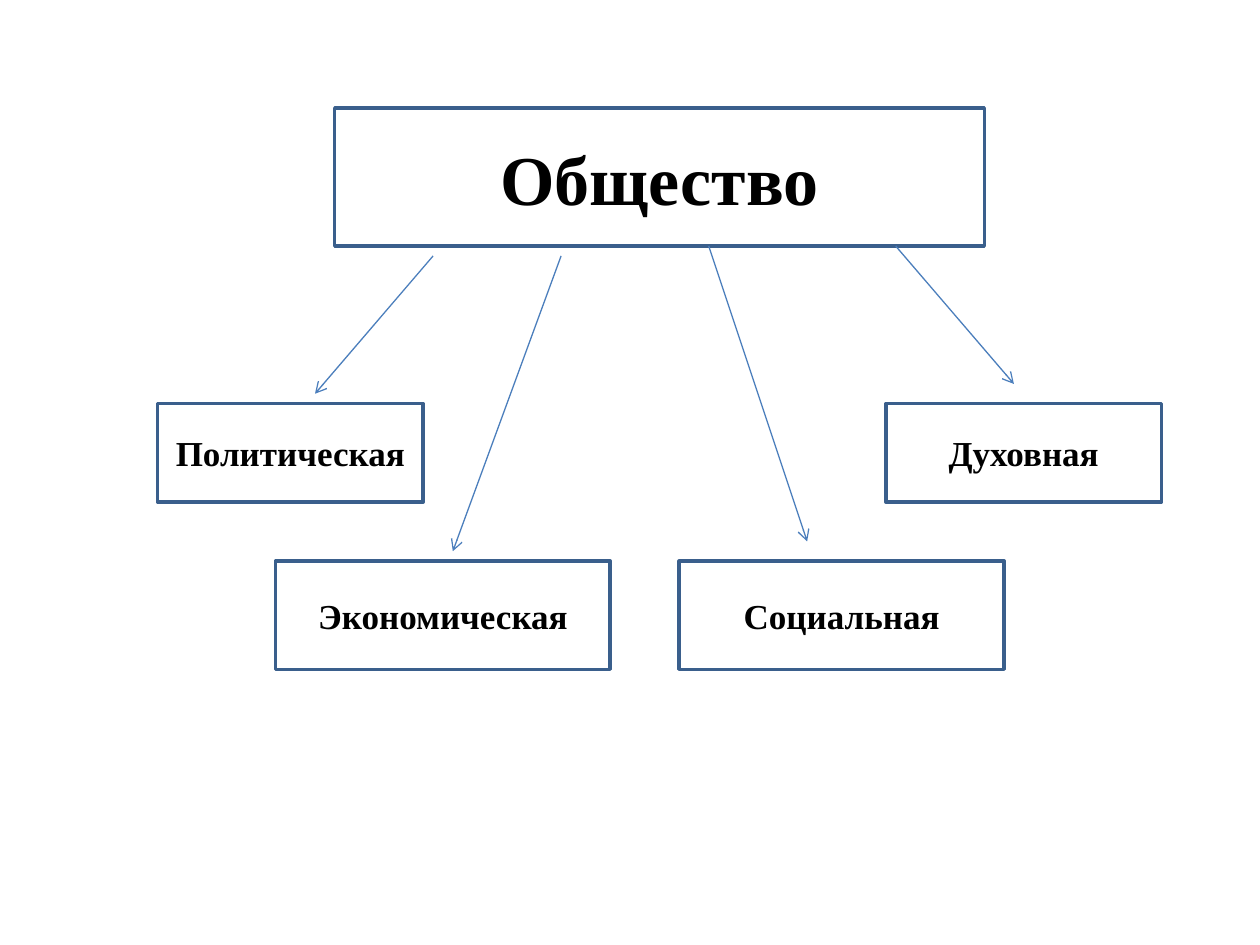
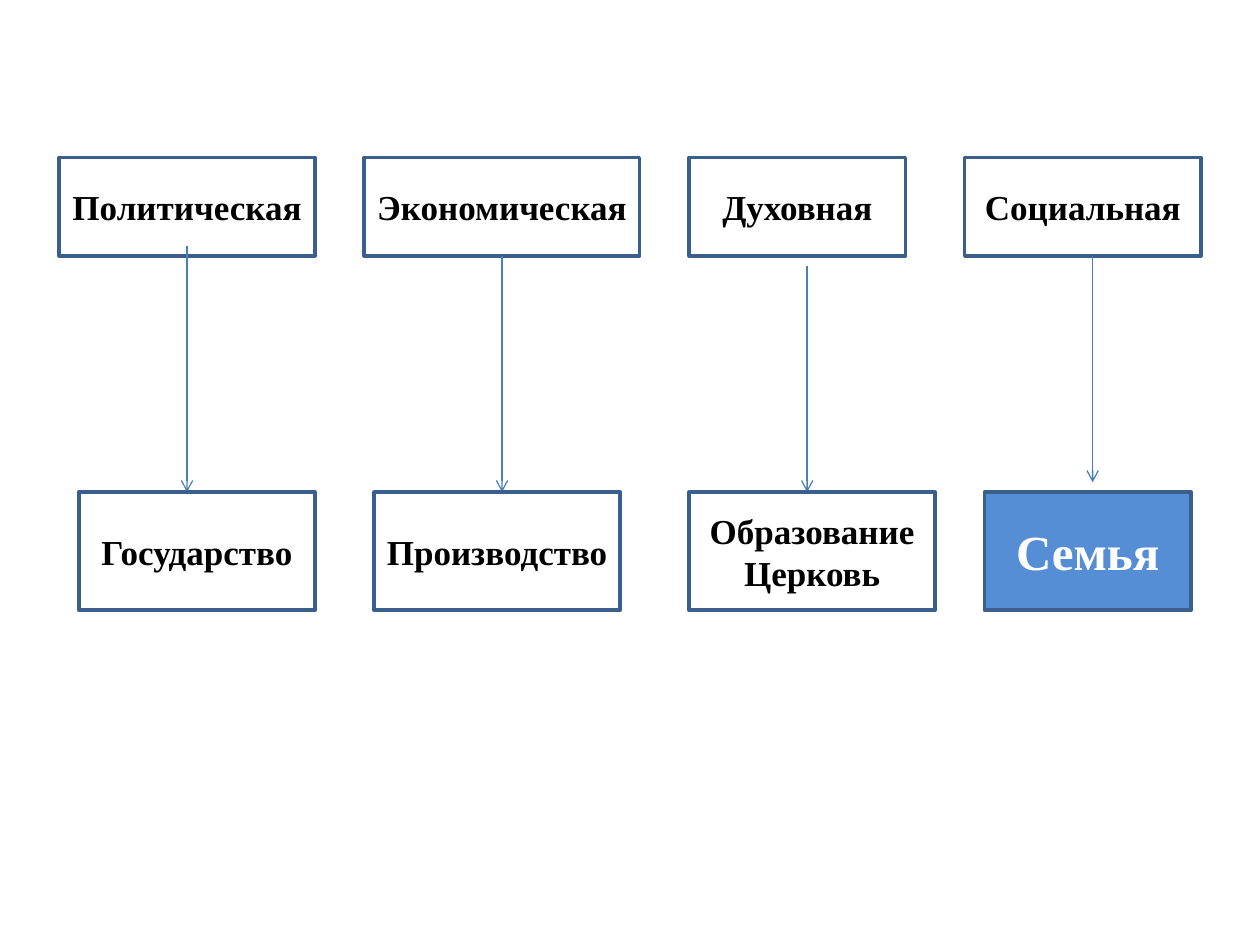
"""Build two diagrams: the spheres of society and their institutions."""
from dataclasses import dataclass

from lxml import etree
from pptx import Presentation
from pptx.dml.color import RGBColor
from pptx.enum import shapes, text
from pptx.oxml import ns
from pptx.slide import Slide
from pptx.util import Pt

WHITE = RGBColor(0xFF, 0xFF, 0xFF)
BLACK = RGBColor(0x00, 0x00, 0x00)
BORDER = RGBColor(0x3A, 0x5F, 0x8C)
ARROW = RGBColor(0x4B, 0x7E, 0xBC)
ACCENT = RGBColor(0x55, 0x8E, 0xD5)
FONT = "Times New Roman"


@dataclass(frozen=True)
class Box:
    label: str
    left: float
    top: float
    width: float
    height: float
    size: float = 20
    fill: RGBColor = WHITE
    color: RGBColor = BLACK


@dataclass(frozen=True)
class Arrow:
    start_x: float
    start_y: float
    end_x: float
    end_y: float


SOCIETY = Box("Общество", 191.25, 61.88, 371.25, 78.75, size=40)
SPHERES = [
    Box("Политическая", 90, 230.63, 151.88, 56.25),
    Box("Экономическая", 157.5, 320.63, 191.25, 61.88),
    Box("Социальная", 388.13, 320.63, 185.63, 61.88),
    Box("Духовная", 506.25, 230.63, 157.5, 56.25),
]
SPHERE_ARROWS = [
    Arrow(247.5, 146.25, 180, 225),
    Arrow(320.63, 146.25, 258.75, 315),
    Arrow(405, 140.63, 461.25, 309.38),
    Arrow(511.88, 140.63, 579.38, 219.38),
]

SPHERE_ROW = [
    Box(label, left, 90, width, 56.25)
    for label, left, width in [
        ("Политическая", 33.75, 146.25),
        ("Экономическая", 208.13, 157.5),
        ("Духовная", 393.75, 123.75),
        ("Социальная", 551.25, 135),
    ]
]
INSTITUTION_TOP, INSTITUTION_HEIGHT = 281.25, 67.5
INSTITUTIONS = [
    Box(label, left, INSTITUTION_TOP, width, INSTITUTION_HEIGHT)
    for label, left, width in [
        ("Государство", 45, 135),
        ("Производство", 213.75, 140.63),
        ("Образование\nЦерковь", 393.75, 140.63),
    ]
]
FAMILY = Box("Семья", 562.5, INSTITUTION_TOP, 118.13, INSTITUTION_HEIGHT,
             size=28, fill=ACCENT, color=WHITE)
INSTITUTION_ARROWS = [
    Arrow(x, start, x, end)
    for x, start, end in [
        (106.88, 140.63, INSTITUTION_TOP),
        (286.88, 146.25, INSTITUTION_TOP),
        (461.25, 151.88, INSTITUTION_TOP),
        (624.38, 146.25, 275.63),
    ]
]

DIAGRAMS = [
    [SOCIETY, *SPHERE_ARROWS, *SPHERES],
    [*SPHERE_ROW, *INSTITUTION_ARROWS, *INSTITUTIONS, FAMILY],
]


def draw_box(page: Slide, box: Box) -> None:
    """Draw a bordered rectangle with a centred bold label."""
    shape = page.shapes.add_shape(
        shapes.MSO_SHAPE.RECTANGLE,
        Pt(box.left), Pt(box.top), Pt(box.width), Pt(box.height))
    shape.shadow.inherit = False
    shape.fill.solid()
    shape.fill.fore_color.rgb = box.fill
    shape.line.color.rgb = BORDER
    shape.line.width = Pt(2)
    frame = shape.text_frame
    frame.word_wrap = True
    frame.margin_left = frame.margin_right = Pt(3.6)
    frame.vertical_anchor = text.MSO_ANCHOR.MIDDLE
    frame.text = box.label
    for para in frame.paragraphs:
        para.alignment = text.PP_ALIGN.CENTER
        para.font.name = FONT
        para.font.size = Pt(box.size)
        para.font.bold = True
        para.font.color.rgb = box.color


def draw_arrow(page: Slide, arrow: Arrow) -> None:
    """Draw a thin straight line with an open arrowhead at its end."""
    connector = page.shapes.add_connector(
        shapes.MSO_CONNECTOR.STRAIGHT,
        Pt(arrow.start_x), Pt(arrow.start_y), Pt(arrow.end_x), Pt(arrow.end_y))
    connector.line.color.rgb = ARROW
    connector.line.width = Pt(0.75)
    etree.SubElement(connector.line._get_or_add_ln(), ns.qn("a:tailEnd"), type="arrow")
    etree.SubElement(connector._element.spPr, ns.qn("a:effectLst"))


def main() -> None:
    """Create the deck and save it."""
    deck = Presentation()
    deck.slide_width, deck.slide_height = Pt(720), Pt(540)
    for diagram in DIAGRAMS:
        page = deck.slides.add_slide(deck.slide_layouts[6])
        for item in diagram:
            if isinstance(item, Box):
                draw_box(page, item)
            else:
                draw_arrow(page, item)
    deck.save("out.pptx")


if __name__ == "__main__":
    main()
